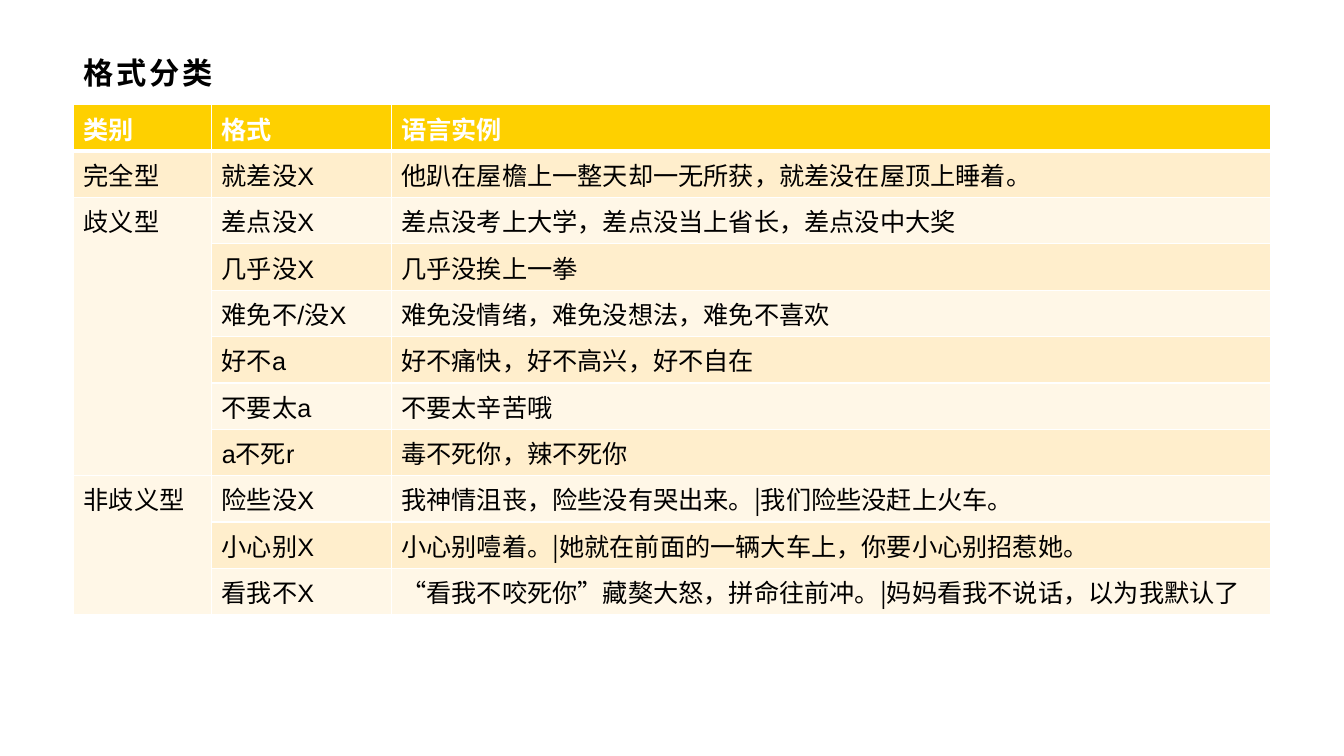
"""Build the slide that sorts redundant negation patterns into three types."""
import pptx
import pptx.dml.color
import pptx.enum.lang
import pptx.enum.text
import pptx.oxml
import pptx.oxml.ns
import pptx.util

Inches, Pt = pptx.util.Inches, pptx.util.Pt
COLORS = {
    "black": "000000",
    "white": "FFFFFF",
    "header": "FED000",
    "odd": "FFEECC",
    "even": "FFF7E7",
}
LATIN, CHINESE = "Arial", "Noto Sans CJK SC"
ROWS = [
    ("类别", "格式", "语言实例"),
    ("完全型", "就差没X", "他趴在屋檐上一整天却一无所获，就差没在屋顶上睡着。"),
    ("歧义型", "差点没X", "差点没考上大学，差点没当上省长，差点没中大奖"),
    ("", "几乎没X", "几乎没挨上一拳"),
    ("", "难免不/没X", "难免没情绪，难免没想法，难免不喜欢"),
    ("", "好不a", "好不痛快，好不高兴，好不自在"),
    ("", "不要太a", "不要太辛苦哦"),
    ("", "a不死r", "毒不死你，辣不死你"),
    ("非歧义型", "险些没X", "我神情沮丧，险些没有哭出来。|我们险些没赶上火车。"),
    ("", "小心别X", "小心别噎着。|她就在前面的一辆大车上，你要小心别招惹她。"),
    ("", "看我不X", "“看我不咬死你”藏獒大怒，拼命往前冲。|妈妈看我不说话，以为我默认了"),
]
COLUMN_WIDTHS = [1.37, 1.78, 8.72]
ROW_HEIGHT = 0.46
MERGED_ROWS = [(2, 7), (8, 10)]


def style_text(frame, size, color, bold, latin=LATIN):
    for span in frame.paragraphs[0].runs:
        font = span.font
        font.size, font.bold, font.name = Pt(size), bold, latin
        font.color.rgb = pptx.dml.color.RGBColor.from_string(COLORS[color])
        font.language_id = pptx.enum.lang.MSO_LANGUAGE_ID.SIMPLIFIED_CHINESE
        properties = span._r.get_or_add_rPr()
        east_asian = pptx.oxml.parse_xml(
            f'<a:ea {pptx.oxml.ns.nsdecls("a")} typeface="{CHINESE}"/>')
        properties.find(pptx.oxml.ns.qn("a:latin")).addnext(east_asian)


def add_border(cell, side, width):
    cell._tc.get_or_add_tcPr().append(pptx.oxml.parse_xml(
        f'<a:ln{side} {pptx.oxml.ns.nsdecls("a")} w="{Pt(width)}"><a:solidFill>'
        f'<a:srgbClr val="{COLORS["white"]}"/></a:solidFill></a:ln{side}>'))


deck = pptx.Presentation()
deck.slide_width, deck.slide_height = Inches(13.33), Inches(7.5)
page = deck.slides.add_slide(deck.slide_layouts[6])

title = page.shapes.add_textbox(Inches(0.73), Inches(0.48), Inches(11.87), Inches(0.48))
title.text_frame.word_wrap = True
title.text_frame.vertical_anchor = pptx.enum.text.MSO_ANCHOR.MIDDLE
title.text_frame.text = "格式分类"
style_text(title.text_frame, 21.6, "black", True)
title.text_frame.paragraphs[0].runs[0]._r.get_or_add_rPr().set("spc", "200")

table = page.shapes.add_table(
    len(ROWS), len(COLUMN_WIDTHS), Inches(0.73), Inches(1.04),
    Inches(sum(COLUMN_WIDTHS)), Inches(ROW_HEIGHT * len(ROWS))).table
for column, width in zip(table.columns, COLUMN_WIDTHS):
    column.width = Inches(width)

for row_index, texts in enumerate(ROWS):
    table.rows[row_index].height = Inches(ROW_HEIGHT)
    is_header = row_index == 0
    fill = "header" if is_header else "odd" if row_index % 2 else "even"
    for column_index, text in enumerate(texts):
        cell = table.cell(row_index, column_index)
        cell.text_frame.text = text
        is_example = column_index == 2 and not is_header
        style_text(cell.text_frame, 18, "white" if is_header else "black",
                   is_header, CHINESE if is_example else LATIN)
        add_border(cell, "L", 1)
        add_border(cell, "R", 1)
        add_border(cell, "T", 3 if row_index == 1 else 1)
        add_border(cell, "B", 3 if is_header else 1)
        cell.fill.solid()
        cell.fill.fore_color.rgb = pptx.dml.color.RGBColor.from_string(COLORS[fill])

for first, last in MERGED_ROWS:
    table.cell(first, 0).merge(table.cell(last, 0))

deck.save("out.pptx")
